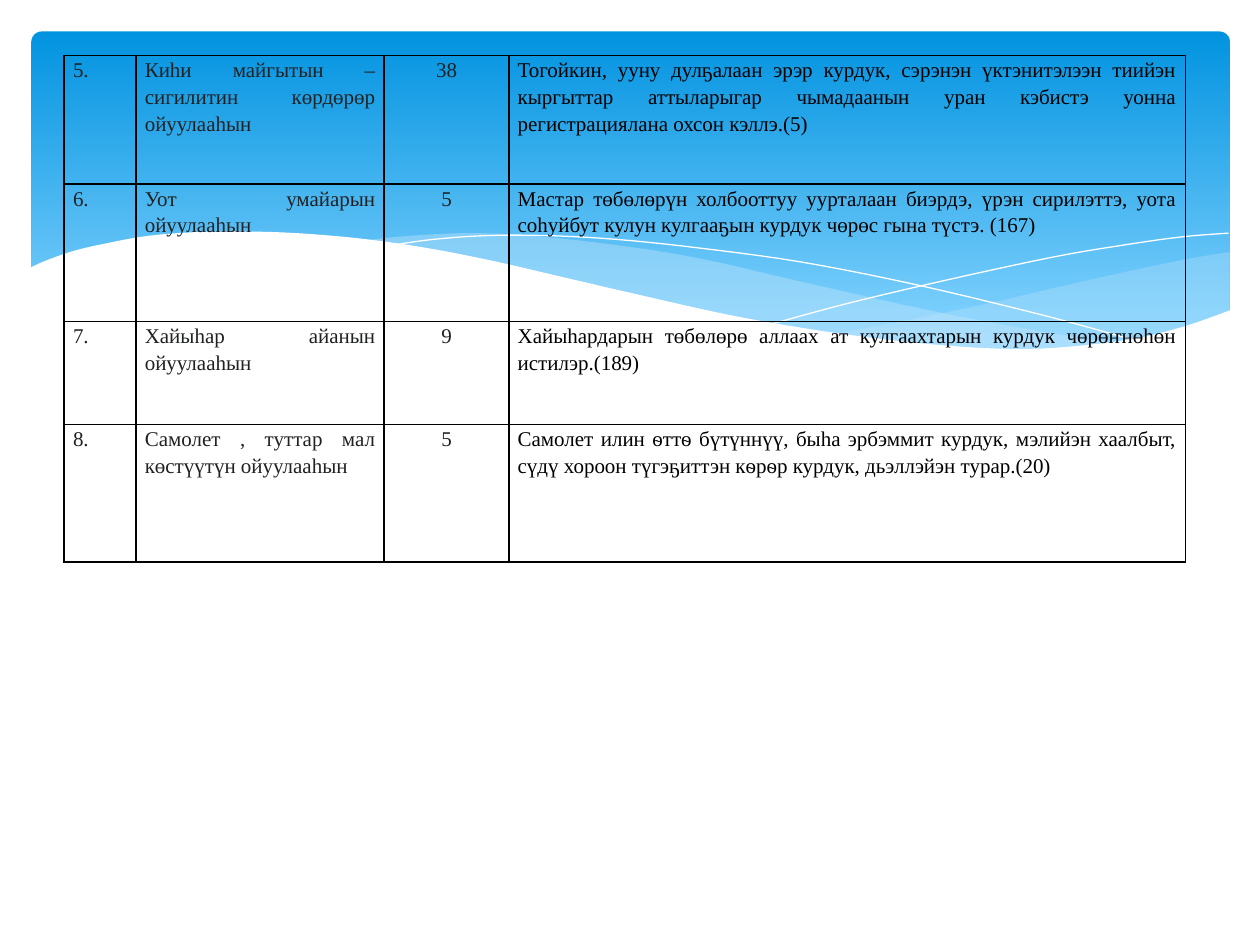
"""Build a slide with a four-row table over a blue wave banner."""
from lxml import etree
from pptx import Presentation
from pptx import util as u
from pptx.dml.color import RGBColor
from pptx.enum import shapes, text
from pptx.oxml import ns

PX = 9144
FONT = "Times New Roman"
DEEP = RGBColor(0x02, 0x93, 0xE0)
SKY = RGBColor(0x83, 0xD3, 0xFE)
MIST = RGBColor(0xC6, 0xE7, 0xFC)
WHITE = RGBColor(255, 255, 255)
BLACK = RGBColor(0, 0, 0)
INK = RGBColor(0x20, 0x21, 0x22)

COLS = (57, 197, 99, 537)
TALL = (102, 109, 82, 109)
ROWS = (
    ("5.", "Киhи майгытын – сигилитин көрдөрөр ойуулааhын", "38",
     "Тогойкин, ууну дулҕалаан эрэр курдук, сэрэнэн үктэнитэлээн тиийэн "
     "кыргыттар аттыларыгар чымадаанын уран кэбистэ уонна "
     "регистрациялана охсон кэллэ.(5)"),
    ("6.", "Уот умайарын ойуулааhын", "5",
     "Мастар төбөлөрүн холбооттуу уурталаан биэрдэ, үрэн сирилэттэ, уота "
     "соhуйбут кулун кулгааҕын курдук чөрөс гына түстэ. (167)"),
    ("7.", "Хайыhар айанын ойуулааhын", "9",
     "Хайыhардарын төбөлөрө аллаах ат кулгаахтарын курдук чөрөҥнөhөн "
     "истилэр.(189)"),
    ("8.", "Самолет , туттар мал көстүүтүн ойуулааhын", "5",
     "Самолет илин ѳттѳ бүтүннүү, быһа эрбэммит курдук, мэлийэн хаалбыт, "
     "сүдү хороон түгэҕиттэн кѳрѳр курдук, дьэллэйэн турар.(20)"),
)

RIGHT = (
    ((976, 200), (935, 207), (861, 223), (779, 242), (706, 257), (661, 265)),
    ((661, 265), (719, 272), (769, 277), (814, 278), (863, 275),
     (913, 267), (949, 257), (976, 247)),
)
LEFT = (
    ((893, 273), (837, 265), (741, 247), (629, 222), (569, 208), (514, 198),
     (442, 189), (380, 185), (328, 187), (286, 191)),
    ((286, 191), (342, 199), (404, 211), (491, 232), (566, 248), (634, 261),
     (695, 270), (748, 276), (807, 278), (857, 277), (893, 273)),
)
FALL = (((309, 195), (344, 190), (387, 187), (433, 187), (489, 190),
         (556, 197), (636, 208), (727, 226), (831, 251), (907, 272)),)
RISE = (((613, 257), (672, 241), (748, 223), (836, 204), (895, 194),
         (938, 188), (975, 185)),)
FRONT = (
    ((977, 246), (940, 259), (899, 269), (850, 275), (809, 277), (761, 275),
     (708, 270), (648, 262), (579, 250), (503, 233), (447, 220), (391, 207),
     (340, 197), (292, 190), (250, 186), (211, 184), (161, 184), (119, 187),
     (85, 193), (59, 199), (36, 207), (23, 213)),
    ((23, 329), (977, 329)),
)


def px(n):
    """Turn pixels into EMU."""
    return u.Emu(round(n * PX))


def mix(a, b, c, d, t):
    """Blend four values by the Catmull-Rom rule."""
    return (2 * b + (c - a) * t + (2 * a - 5 * b + 4 * c - d) * t ** 2
            + (3 * b - a - 3 * c + d) * t ** 3) / 2


def smooth(keys, steps=5):
    """Return a dense run of points that passes through the keys."""
    pad = (keys[0], *keys, keys[-1])
    dots = [tuple(mix(*axis, s / steps) for axis in zip(*pad[i:i + 4]))
            for i in range(len(keys) - 1) for s in range(steps)]
    return dots + [keys[-1]]


def trace(slide, parts, close):
    """Draw the outline made of smooth parts."""
    dots = [(px(x), px(y)) for part in parts for x, y in smooth(part)]
    pen = slide.shapes.build_freeform(*dots[0], scale=1.0)
    pen.add_line_segments(dots[1:], close=close)
    shape = pen.convert_to_shape()
    shape.shadow.inherit = False
    return shape


def add_wave(slide, parts, tint, alpha=100):
    """Add a filled wave with the given opacity in percent."""
    wave = trace(slide, parts, True)
    wave.line.fill.background()
    wave.fill.solid()
    wave.fill.fore_color.rgb = tint
    if alpha < 100:
        clr = wave.fill._xPr.find(".//" + ns.qn("a:srgbClr"))
        etree.SubElement(clr, ns.qn("a:alpha"), val=str(alpha * 1000))


def add_curve(slide, parts):
    """Add a white hairline curve."""
    curve = trace(slide, parts, False)
    curve.fill.background()
    curve.line.color.rgb = WHITE
    curve.line.width = u.Pt(0)


def add_panel(slide):
    """Add the rounded gradient banner."""
    panel = slide.shapes.add_shape(shapes.MSO_SHAPE.ROUNDED_RECTANGLE,
                                   px(25), px(25), px(951), px(270))
    panel.adjustments[0] = 0.03
    panel.shadow.inherit = False
    panel.line.fill.background()
    panel.fill.gradient()
    panel.fill.gradient_angle = 270
    for stop, tint, pos in zip(panel.fill.gradient_stops, (DEEP, SKY), (0, 0.9)):
        stop.color.rgb = tint
        stop.position = pos


def set_edge(cell):
    """Give a cell thin black borders on all sides."""
    prop = cell._tc.get_or_add_tcPr()
    for i, side in enumerate(("lnL", "lnR", "lnT", "lnB")):
        edge = etree.Element(ns.qn("a:" + side), w=str(u.Pt(1)))
        fill = etree.SubElement(edge, ns.qn("a:solidFill"))
        etree.SubElement(fill, ns.qn("a:srgbClr"), val=str(BLACK))
        prop.insert(i, edge)


def set_cell(cell, words, align, tint):
    """Fill one cell with formatted text."""
    cell.fill.background()
    cell.margin_left = cell.margin_right = px(7)
    cell.margin_top = cell.margin_bottom = 0
    cell.text_frame.text = words
    para = cell.text_frame.paragraphs[0]
    para.alignment = align
    para.line_spacing = 1.15
    font = para.runs[0].font
    font.name, font.size, font.color.rgb = FONT, u.Pt(12), tint
    set_edge(cell)


def add_grid(slide):
    """Add the table of examples."""
    grid = slide.shapes.add_table(len(ROWS), len(COLS), px(51), px(44),
                                  px(sum(COLS)), px(sum(TALL))).table
    grid.first_row = grid.horz_banding = False
    for col, wide in zip(grid.columns, COLS):
        col.width = px(wide)
    for row, tall, words in zip(grid.rows, TALL, ROWS):
        row.height = px(tall)
        for i, cell in enumerate(row.cells):
            align = text.PP_ALIGN.CENTER if i == 2 else text.PP_ALIGN.JUSTIFY
            set_cell(cell, words[i], align, BLACK if i == 3 else INK)


def main():
    """Build and save the slide."""
    deck = Presentation()
    deck.slide_width, deck.slide_height = px(1000), px(750)
    slide = deck.slides.add_slide(deck.slide_layouts[6])
    add_panel(slide)
    add_wave(slide, RIGHT, MIST, 29)
    add_wave(slide, LEFT, MIST, 40)
    add_curve(slide, FALL)
    add_curve(slide, RISE)
    add_wave(slide, FRONT, WHITE)
    add_grid(slide)
    deck.save("out.pptx")


if __name__ == "__main__":
    main()
